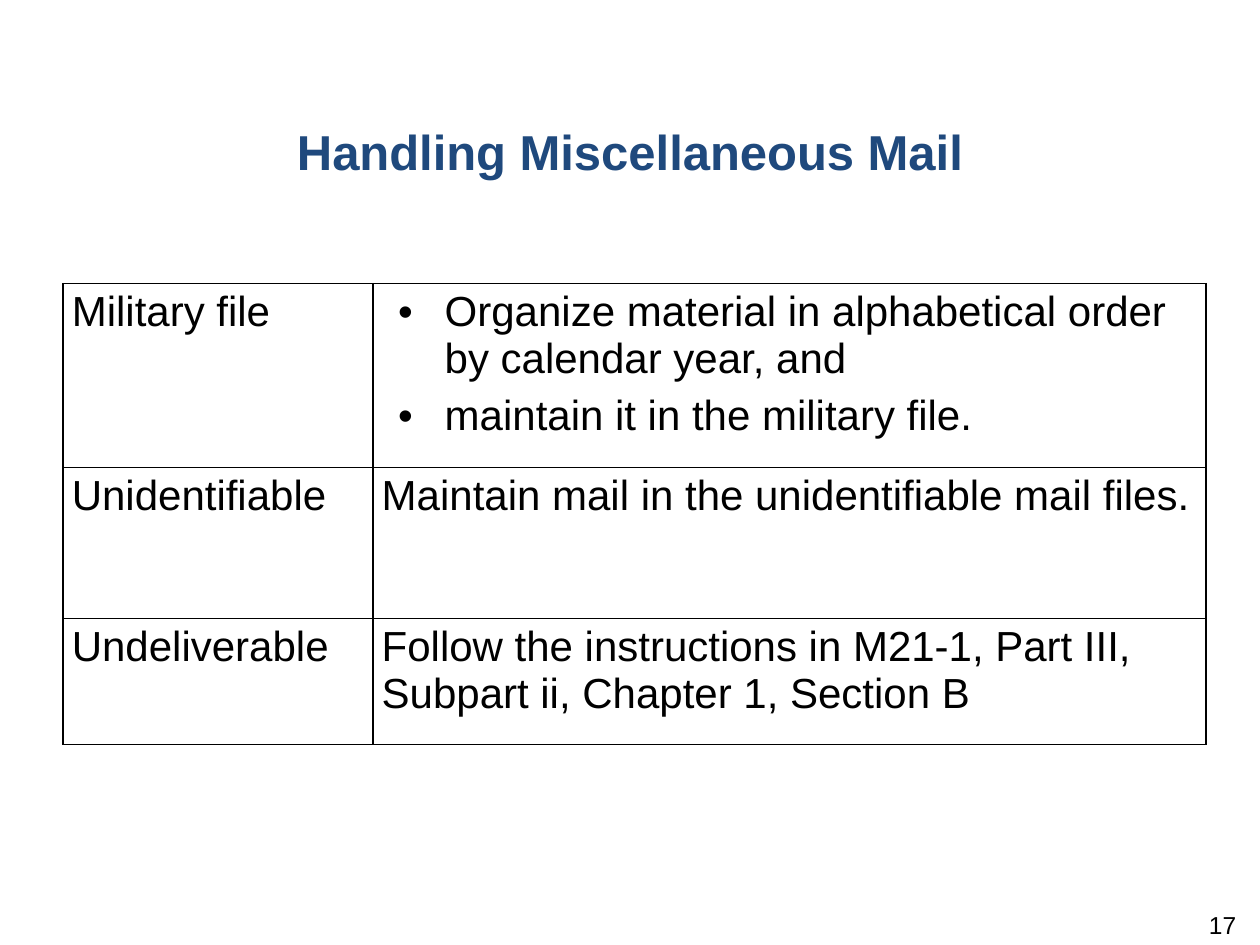
from dataclasses import dataclass

from lxml.etree import SubElement
from pptx import Presentation
from pptx.dml.color import RGBColor
from pptx.enum.text import MSO_ANCHOR as Anchor, PP_ALIGN as Align
from pptx.oxml.ns import qn
from pptx.util import Inches, Pt

TITLE = "Handling Miscellaneous Mail"
PAGE_NUMBER = "17"
MAIL_RULES = [
    ("Military file", [
        "Organize material in alphabetical order by calendar year, and",
        "maintain it in the military file.",
    ]),
    ("Unidentifiable", "Maintain mail in the unidentifiable mail files."),
    ("Undeliverable", "Follow the instructions in M21-1, Part III, Subpart ii, Chapter 1, Section B"),
]
COLUMN_WIDTHS = (2.46, 6.61)
ROW_HEIGHTS = (1.46, 1.2, 1)
TABLE_LEFT, TABLE_TOP = 0.5, 2.25


@dataclass(frozen=True)
class Theme:
    font: str = "Arial"
    heading: str = "1F497D"
    ink: str = "000000"
    paper: str = "FFFFFF"
    title_size: int = 28
    table_size: int = 24
    number_size: int = 14
    space_after: int = 6
    border: int = 1


THEME = Theme()


def format_paragraph(paragraph, size, color=THEME.ink, bold=False, align=Align.LEFT):
    paragraph.alignment = align
    paragraph.space_before = Pt(0)
    paragraph.space_after = Pt(THEME.space_after)
    for run in paragraph.runs:
        run.font.name = THEME.font
        run.font.size = Pt(size)
        run.font.bold = bold
        run.font.color.rgb = RGBColor.from_string(color)


def set_margins(frame, sides, top, bottom):
    frame.margin_left = frame.margin_right = Inches(sides)
    frame.margin_top, frame.margin_bottom = Inches(top), Inches(bottom)


def add_bullet(paragraph):
    properties = paragraph._p.get_or_add_pPr()
    properties.set("marL", str(Inches(0.5)))
    properties.set("indent", str(Inches(-0.37)))
    SubElement(properties, qn("a:buFont"), typeface=THEME.font)
    SubElement(properties, qn("a:buChar"), char="•")


def add_borders(cell):
    properties = cell._tc.get_or_add_tcPr()
    for side in ("lnL", "lnR", "lnT", "lnB"):
        line = SubElement(properties, qn(f"a:{side}"), w=str(Pt(THEME.border)))
        fill = SubElement(line, qn("a:solidFill"))
        SubElement(fill, qn("a:srgbClr"), val=THEME.ink)


def fill_cell(cell, content):
    bulleted = isinstance(content, list)
    cell.text_frame.text = "\n".join(content) if bulleted else content
    set_margins(cell, 0.07, 0.04, 0.04)
    for paragraph in cell.text_frame.paragraphs:
        if bulleted:
            add_bullet(paragraph)
        format_paragraph(paragraph, THEME.table_size)
    add_borders(cell)
    cell.fill.solid()
    cell.fill.fore_color.rgb = RGBColor.from_string(THEME.paper)


def add_title(slide, slide_width):
    title = slide.shapes.title
    title.left, title.top = 0, Inches(0.87)
    title.width, title.height = slide_width, Inches(1.19)
    frame = title.text_frame
    frame.text = TITLE
    frame.vertical_anchor = Anchor.TOP
    set_margins(frame, 0.1, 0.09, 0.05)
    format_paragraph(frame.paragraphs[0], THEME.title_size, THEME.heading, True, Align.CENTER)


def add_page_number(slide):
    box = slide.shapes.add_textbox(Inches(7.58), Inches(7.22), Inches(2.33), Inches(0.4))
    frame = box.text_frame
    frame.word_wrap = True
    frame.text = PAGE_NUMBER
    set_margins(frame, 0.1, 0, 0.05)
    format_paragraph(frame.paragraphs[0], THEME.number_size, align=Align.RIGHT)


def add_mail_table(slide):
    table = slide.shapes.add_table(
        len(ROW_HEIGHTS), len(COLUMN_WIDTHS), Inches(TABLE_LEFT), Inches(TABLE_TOP),
        Inches(sum(COLUMN_WIDTHS)), Inches(sum(ROW_HEIGHTS)),
    ).table
    table.first_row = table.horz_banding = False
    for column, width in zip(table.columns, COLUMN_WIDTHS):
        column.width = Inches(width)
    for row, height, contents in zip(table.rows, ROW_HEIGHTS, MAIL_RULES):
        row.height = Inches(height)
        for cell, content in zip(row.cells, contents):
            fill_cell(cell, content)


def main():
    presentation = Presentation()
    presentation.slide_width, presentation.slide_height = Inches(10), Inches(7.5)
    slide = presentation.slides.add_slide(presentation.slide_layouts[5])
    add_title(slide, presentation.slide_width)
    add_page_number(slide)
    add_mail_table(slide)
    presentation.save("out.pptx")


if __name__ == "__main__":
    main()
